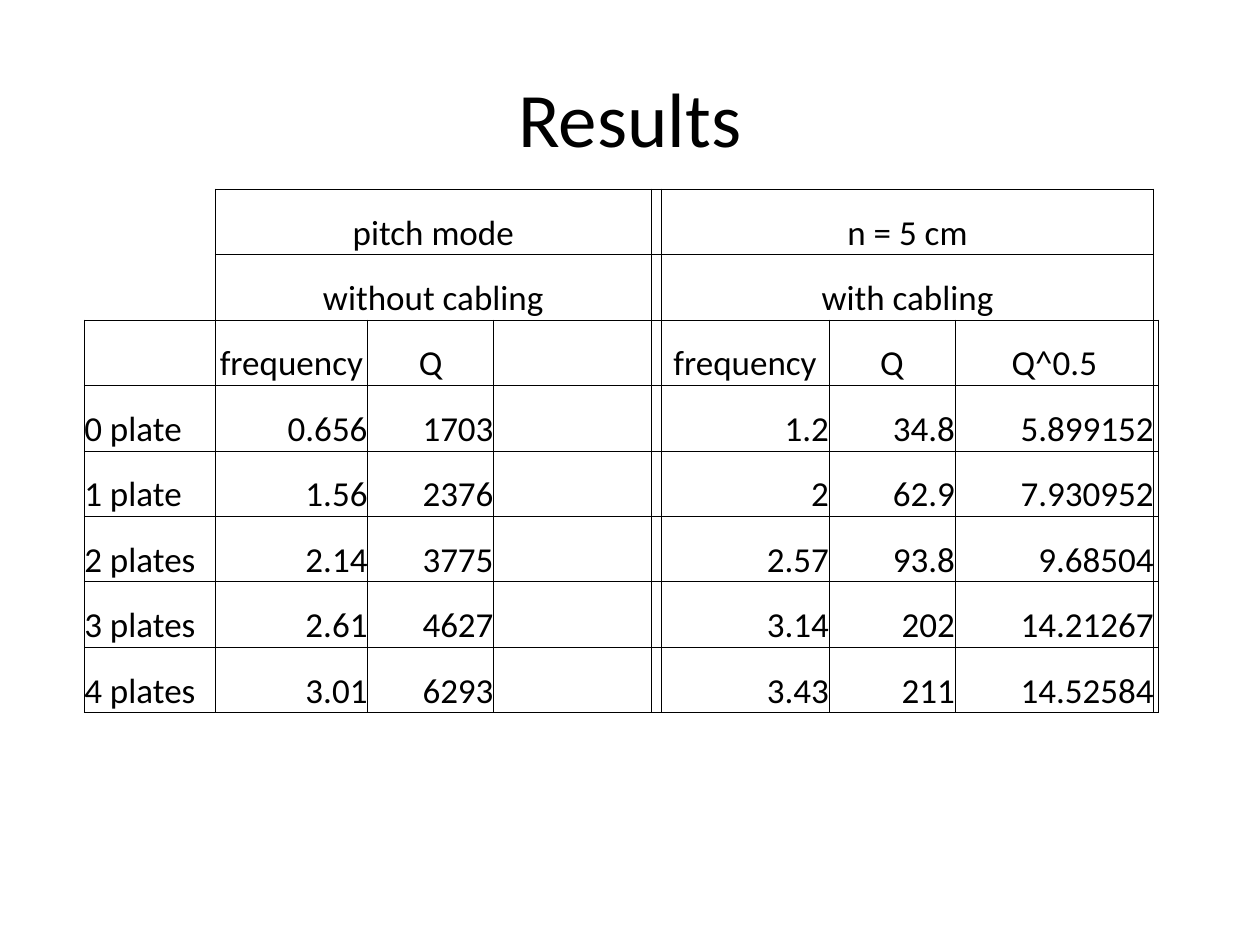
from dataclasses import dataclass

from lxml.etree import SubElement
from pptx import Presentation
from pptx.dml.color import RGBColor
from pptx.enum.text import MSO_ANCHOR, PP_ALIGN
from pptx.oxml.ns import qn
from pptx.util import Cm, Pt


@dataclass(frozen=True)
class Theme:
    font: str = "Calibri"
    ink: str = "000000"
    title_size: int = 44
    cell_size: int = 20
    rule_width: float = 0.5


@dataclass(frozen=True)
class Result:
    label: str
    plain: tuple[str, str]  # frequency, Q
    cabled: tuple[str, str, str]  # frequency, Q, Q^0.5


THEME = Theme()
COL_WIDTHS = (2.64, 3.07, 2.54, 3.18, 0.2, 3.38, 2.54, 4.01, 0.08)
ROW_HEIGHT = 1.32
PLAIN_COL, CABLED_COL, EDGE_COL = 1, 5, 8
GROUP_SPAN = 3
HEADINGS = (("pitch mode", "n = 5 cm"), ("without cabling", "with cabling"))
COLUMN_NAMES = Result("", ("frequency", "Q"), ("frequency", "Q", "Q^0.5"))
RESULTS = (
    Result("0 plate", ("0.656", "1703"), ("1.2", "34.8", "5.899152")),
    Result("1 plate", ("1.56", "2376"), ("2", "62.9", "7.930952")),
    Result("2 plates", ("2.14", "3775"), ("2.57", "93.8", "9.68504")),
    Result("3 plates", ("2.61", "4627"), ("3.14", "202", "14.21267")),
    Result("4 plates", ("3.01", "6293"), ("3.43", "211", "14.52584")),
)


def add_text(tf, text: str, size: int, align: PP_ALIGN) -> None:
    p = tf.paragraphs[0]
    p.alignment = align
    r = p.add_run()
    r.text = text
    r.font.name = THEME.font
    r.font.size = Pt(size)
    r.font.color.rgb = RGBColor.from_string(THEME.ink)


def set_borders(cell, sides: str) -> None:
    """Rule the given sides (out of LRTB) and clear the others."""
    tc_pr = cell._tc.get_or_add_tcPr()
    for side in "LRTB":
        ln = SubElement(tc_pr, qn(f"a:ln{side}"), w=str(Pt(THEME.rule_width)))
        if side in sides:
            fill = SubElement(ln, qn("a:solidFill"))
            SubElement(fill, qn("a:srgbClr"), val=THEME.ink)
        else:
            SubElement(ln, qn("a:noFill"))


def sides_for(row: int, col: int) -> str:
    """The corners beside the group headings stay open."""
    last_heading = len(HEADINGS) - 1
    if row <= last_heading and col in (0, EDGE_COL):
        inner = "R" if col == 0 else "L"
        return inner + ("B" if row == last_heading else "")
    return "LRTB"


def format_cell(cell, sides: str) -> None:
    cell.margin_left = cell.margin_right = 0
    cell.margin_top = cell.margin_bottom = 0
    cell.vertical_anchor = MSO_ANCHOR.BOTTOM
    set_borders(cell, sides)
    cell.fill.background()


def fill_row(table, row: int, result: Result, align: PP_ALIGN) -> None:
    if result.label:
        add_text(table.cell(row, 0).text_frame, result.label,
                 THEME.cell_size, PP_ALIGN.LEFT)
    for start, values in ((PLAIN_COL, result.plain), (CABLED_COL, result.cabled)):
        for col, value in enumerate(values, start):
            add_text(table.cell(row, col).text_frame, value,
                     THEME.cell_size, align)


def add_results_table(s) -> None:
    n_rows = len(HEADINGS) + 1 + len(RESULTS)
    frame = s.shapes.add_table(
        n_rows, len(COL_WIDTHS), Cm(1.7), Cm(3.81),
        Cm(sum(COL_WIDTHS)), Cm(ROW_HEIGHT * n_rows))
    table = frame.table
    table.first_row = table.horz_banding = False
    for column, width in zip(table.columns, COL_WIDTHS):
        column.width = Cm(width)
    for i, row in enumerate(table.rows):
        row.height = Cm(ROW_HEIGHT)
        for j, cell in enumerate(row.cells):
            format_cell(cell, sides_for(i, j))

    # Group headings
    for i, texts in enumerate(HEADINGS):
        for col, text in zip((PLAIN_COL, CABLED_COL), texts):
            cell = table.cell(i, col)
            cell.merge(table.cell(i, col + GROUP_SPAN - 1))
            add_text(cell.text_frame, text, THEME.cell_size, PP_ALIGN.CENTER)

    # Column names, then measurements
    fill_row(table, len(HEADINGS), COLUMN_NAMES, PP_ALIGN.CENTER)
    for i, result in enumerate(RESULTS, len(HEADINGS) + 1):
        fill_row(table, i, result, PP_ALIGN.RIGHT)


def main() -> None:
    prs = Presentation()
    prs.slide_width, prs.slide_height = Cm(25.4), Cm(19.05)
    s = prs.slides.add_slide(prs.slide_layouts[5])

    # Title
    title = s.shapes.title
    title.left, title.top = Cm(1.27), Cm(0.76)
    title.width, title.height = Cm(22.86), Cm(3.18)
    title.text_frame.vertical_anchor = MSO_ANCHOR.MIDDLE
    add_text(title.text_frame, "Results", THEME.title_size, PP_ALIGN.CENTER)

    # Results
    add_results_table(s)
    prs.save("out.pptx")


if __name__ == "__main__":
    main()
